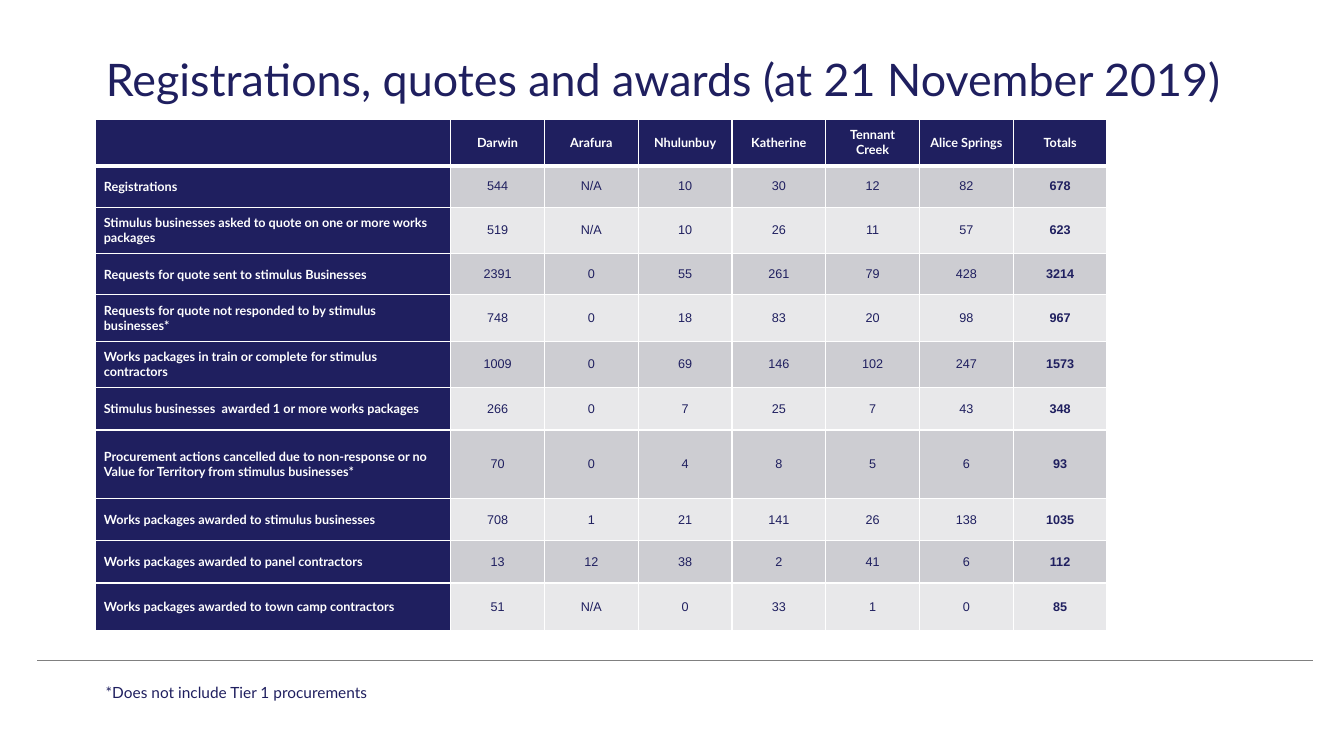
from dataclasses import dataclass

import pptx
import pptx.dml.color
import pptx.enum.shapes
import pptx.enum.text
import pptx.oxml
import pptx.oxml.ns
import pptx.util
from pptx.dml.color import RGBColor
from pptx.enum.text import MSO_ANCHOR, MSO_AUTO_SIZE, PP_ALIGN
from pptx.util import Inches, Pt

NAVY = RGBColor(0x1F, 0x1F, 0x5F)
WHITE = RGBColor(0xFF, 0xFF, 0xFF)
GREY = RGBColor(0x80, 0x80, 0x80)
BAND_DARK = RGBColor(0xCD, 0xCD, 0xD2)
BAND_LIGHT = RGBColor(0xE8, 0xE8, 0xEA)

LEFT = Inches(0.95)
LABEL_WIDTH, VALUE_WIDTH = 3.52, 0.93
HEADER_HEIGHT = 0.42
THIN, THICK = 1, 3


@dataclass(frozen=True)
class Measure:
    label: str
    values: tuple[str, ...]
    height: float


@dataclass(frozen=True)
class CellStyle:
    fill: RGBColor
    color: RGBColor
    font: str
    bold: bool
    align: PP_ALIGN
    margin: float
    space_after: float = 0
    top: int = THIN
    bottom: int = THIN


HEADERS = ("", "Darwin", "Arafura", "Nhulunbuy", "Katherine",
           "Tennant\nCreek", "Alice Springs", "Totals")
MEASURES = (
    Measure("Registrations",
            ("544", "N/A", "10", "30", "12", "82", "678"), 0.41),
    Measure("Stimulus businesses asked to quote on one or more works packages",
            ("519", "N/A", "10", "26", "11", "57", "623"), 0.4),
    Measure("Requests for quote sent to stimulus Businesses",
            ("2391", "0", "55", "261", "79", "428", "3214"), 0.41),
    Measure("Requests for quote not responded to by stimulus businesses*",
            ("748", "0", "18", "83", "20", "98", "967"), 0.42),
    Measure("Works packages in train or complete for stimulus contractors",
            ("1009", "0", "69", "146", "102", "247", "1573"), 0.42),
    Measure("Stimulus businesses  awarded 1 or more works packages",
            ("266", "0", "7", "25", "7", "43", "348"), 0.42),
    Measure("Procurement actions cancelled due to non-response or no "
            "Value for Territory from stimulus businesses*",
            ("70", "0", "4", "8", "5", "6", "93"), 0.68),
    Measure("Works packages awarded to stimulus businesses",
            ("708", "1", "21", "141", "26", "138", "1035"), 0.42),
    Measure("Works packages awarded to panel contractors",
            ("13", "12", "38", "2", "41", "6", "112"), 0.42),
    Measure("Works packages awarded to town camp contractors",
            ("51", "N/A", "0", "33", "1", "0", "85"), 0.47),
)


def add_span(para, text: str, size: float, color: RGBColor,
             font: str = "Lato", bold: bool = False) -> None:
    span = para.add_run()
    span.text = text
    span.font.size = Pt(size)
    span.font.name = font
    span.font.bold = bold
    span.font.color.rgb = color


def add_border(cell, side: str, width: int) -> None:
    properties = cell._tc.get_or_add_tcPr()
    border = pptx.oxml.parse_xml(
        f'<a:{side} {pptx.oxml.ns.nsdecls("a")} w="{Pt(width)}">'
        f'<a:solidFill><a:srgbClr val="{WHITE}"/></a:solidFill></a:{side}>')
    properties.append(border)


def fill_cell(cell, text: str, style: CellStyle) -> None:
    for side, width in (("lnL", THIN), ("lnR", THIN),
                        ("lnT", style.top), ("lnB", style.bottom)):
        add_border(cell, side, width)
    cell.fill.solid()
    cell.fill.fore_color.rgb = style.fill
    cell.vertical_anchor = MSO_ANCHOR.MIDDLE
    cell.margin_left = cell.margin_right = Inches(style.margin)
    cell.margin_top = cell.margin_bottom = Inches(style.margin)
    if not text:
        return
    frame = cell.text_frame
    for index, line in enumerate(text.split("\n")):
        para = frame.add_paragraph() if index else frame.paragraphs[0]
        para.alignment = style.align
        para.space_after = Pt(style.space_after)
        add_span(para, line, 9, style.color, style.font, style.bold)


def add_title(page, text: str) -> None:
    title = page.shapes.title
    title.left, title.top = LEFT, Inches(0.39)
    title.width, title.height = Inches(11.49), Inches(0.79)
    frame = title.text_frame
    frame.auto_size = MSO_AUTO_SIZE.NONE
    frame.vertical_anchor = MSO_ANCHOR.TOP
    para = frame.paragraphs[0]
    para.alignment = PP_ALIGN.LEFT
    para.line_spacing = Pt(43.9)
    para.space_after = Pt(14.6)
    add_span(para, text, 32, NAVY)


def add_measures_table(page) -> None:
    heights = [HEADER_HEIGHT] + [measure.height for measure in MEASURES]
    widths = [LABEL_WIDTH] + [VALUE_WIDTH] * (len(HEADERS) - 1)
    table = page.shapes.add_table(
        len(heights), len(widths), LEFT, Inches(1.18),
        Inches(sum(widths)), Inches(sum(heights))).table
    table.first_col = True
    for column, width in zip(table.columns, widths):
        column.width = Inches(width)
    for row, height in zip(table.rows, heights):
        row.height = Inches(height)

    header = CellStyle(NAVY, WHITE, "Lato", True, PP_ALIGN.CENTER, 0.08,
                       bottom=THICK)
    for column, text in enumerate(HEADERS):
        fill_cell(table.cell(0, column), text, header)

    for row, measure in enumerate(MEASURES, start=1):
        top = THICK if row == 1 else THIN
        band = BAND_DARK if row % 2 else BAND_LIGHT
        label = CellStyle(NAVY, WHITE, "Lato", True, PP_ALIGN.LEFT, 0.08,
                          top=top)
        fill_cell(table.cell(row, 0), measure.label, label)
        for column, value in enumerate(measure.values, start=1):
            is_total = column == len(measure.values)
            figure = CellStyle(band, NAVY, "Arial", is_total,
                               PP_ALIGN.CENTER, 0, space_after=6, top=top)
            fill_cell(table.cell(row, column), value, figure)


def add_footer_line(page) -> None:
    line = page.shapes.add_connector(
        pptx.enum.shapes.MSO_CONNECTOR.STRAIGHT,
        Inches(0.37), Inches(6.55), Inches(13.02), Inches(6.55))
    line.line.color.rgb = GREY
    line.line.width = Pt(1)
    line._element.spPr.append(pptx.oxml.parse_xml(
        f'<a:effectLst {pptx.oxml.ns.nsdecls("a")}/>'))


def add_footnote(page, text: str) -> None:
    box = page.shapes.add_textbox(LEFT, Inches(6.73),
                                  Inches(3.54), Inches(0.29))
    box.text_frame.word_wrap = True
    box.text_frame.auto_size = MSO_AUTO_SIZE.SHAPE_TO_FIT_TEXT
    add_span(box.text_frame.paragraphs[0], text, 11, NAVY)


def main() -> None:
    deck = pptx.Presentation()
    deck.slide_width, deck.slide_height = Inches(13.33), Inches(7.5)
    page = deck.slides.add_slide(deck.slide_layouts.get_by_name("Title Only"))

    # Heading and rule
    add_footer_line(page)
    add_title(page, "Registrations, quotes and awards (at 21 November 2019)")
    # Figures by region
    add_measures_table(page)
    # Footnote
    add_footnote(page, "*Does not include Tier 1 procurements")

    deck.save("out.pptx")


if __name__ == "__main__":
    main()
